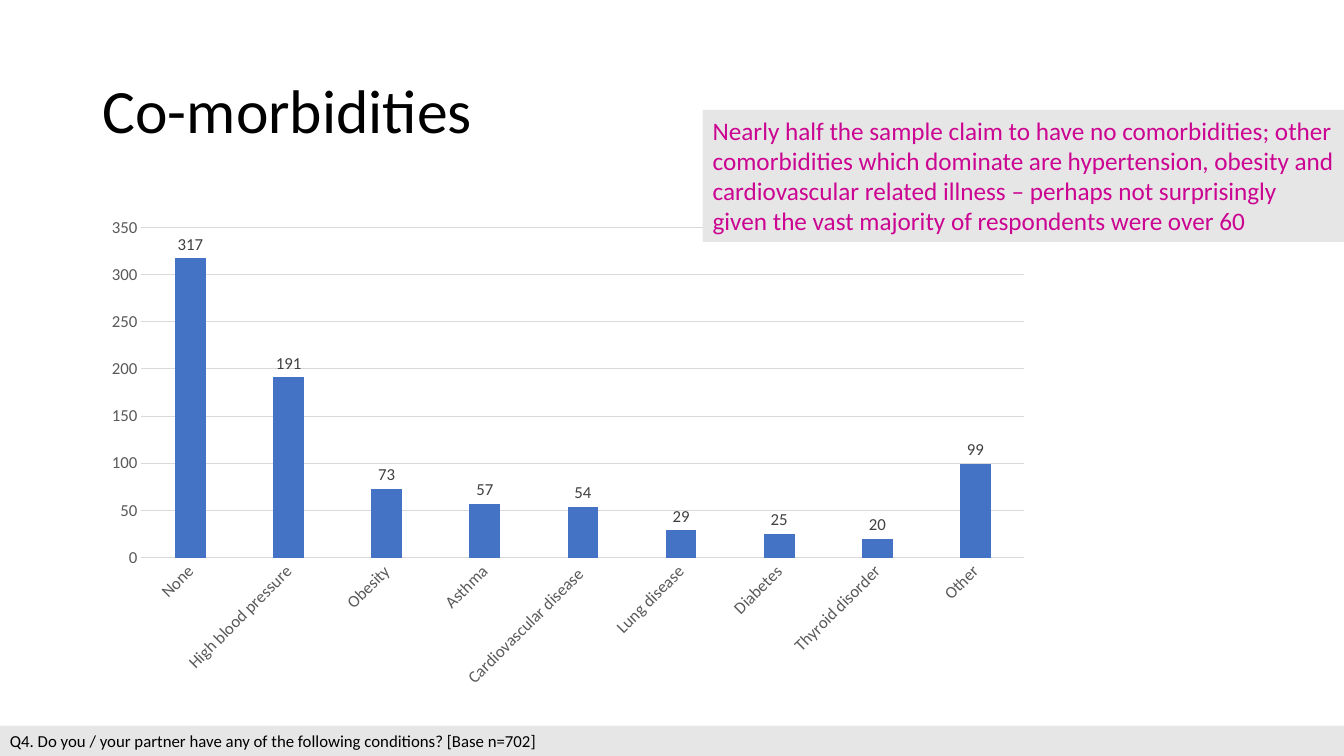
from pptx import Presentation
from pptx.chart.data import CategoryChartData
from pptx.dml.color import RGBColor
from pptx.enum.chart import XL_CHART_TYPE, XL_LABEL_POSITION, XL_TICK_MARK
from pptx.enum.text import MSO_ANCHOR
from pptx.util import Inches, Pt

COLUMNS = XL_CHART_TYPE.COLUMN_CLUSTERED
OUTSIDE_END = XL_LABEL_POSITION.OUTSIDE_END
NO_TICK = XL_TICK_MARK.NONE
TOP, MIDDLE = MSO_ANCHOR.TOP, MSO_ANCHOR.MIDDLE

WIDTH, HEIGHT = 13.33, 7.5
FONT = "Calibri"
BLACK, PANEL, ACCENT, BAR = "000000", "E7E6E6", "CB0592", "4472C4"
AXIS_TEXT, LABEL_TEXT, GRID = "595959", "404040", "D9D9D9"

TITLE = "Co-morbidities"
FINDING = (
    "Nearly half the sample claim to have no comorbidities; other comorbidities "
    "which dominate are hypertension, obesity and cardiovascular related illness "
    "– perhaps not surprisingly given the vast majority of respondents were over 60"
)
QUESTION = "Q4. Do you / your partner have any of the following conditions? [Base n=702]"
CONDITIONS = {
    "None": 317,
    "High blood pressure": 191,
    "Obesity": 73,
    "Asthma": 57,
    "Cardiovascular disease ": 54,
    "Lung disease": 29,
    "Diabetes": 25,
    "Thyroid disorder": 20,
    "Other": 99,
}

MARGIN = 0.92
FINDING_LEFT = 6.97
FOOTER_HEIGHT = 0.3
TITLE_AREA = (MARGIN, 0.4, WIDTH - 2 * MARGIN, 1.45)
CHART_AREA = (MARGIN, 2.06, 9.43, 4.86)
FINDING_AREA = (FINDING_LEFT, 1.09, WIDTH - FINDING_LEFT, 1.31)
FOOTER_AREA = (0, HEIGHT - FOOTER_HEIGHT, WIDTH, FOOTER_HEIGHT)


def rgb(value):
    return RGBColor.from_string(value)


def style_font(font, size, color):
    font.name = FONT
    font.size = Pt(size)
    font.color.rgb = rgb(color)


def add_text(slide, text, area, size, color=BLACK, fill=None, anchor=TOP, spacing=1.0):
    box = slide.shapes.add_textbox(*map(Inches, area))
    if fill:
        box.fill.solid()
        box.fill.fore_color.rgb = rgb(fill)
    frame = box.text_frame
    frame.word_wrap = True
    frame.vertical_anchor = anchor
    paragraph = frame.paragraphs[0]
    paragraph.line_spacing = spacing
    run = paragraph.add_run()
    run.text = text
    style_font(run.font, size, color)


def style_line(line):
    line.color.rgb = rgb(GRID)
    line.width = Pt(0.75)


def add_conditions_chart(slide):
    data = CategoryChartData()
    data.categories = list(CONDITIONS)
    data.add_series("Series 1", list(CONDITIONS.values()))
    chart = slide.shapes.add_chart(COLUMNS, *map(Inches, CHART_AREA), data).chart
    chart.has_legend = False
    chart.has_title = False
    style_font(chart.font, 10, BLACK)

    for axis in (chart.category_axis, chart.value_axis):
        axis.major_tick_mark = axis.minor_tick_mark = NO_TICK
        style_font(axis.tick_labels.font, 12, AXIS_TEXT)
    style_line(chart.category_axis.format.line)
    chart.value_axis.format.line.fill.background()
    chart.value_axis.has_major_gridlines = True
    style_line(chart.value_axis.major_gridlines.format.line)

    plot = chart.plots[0]
    plot.gap_width, plot.overlap = 219, -27
    plot.vary_by_categories = False
    bars = plot.series[0]
    bars.format.fill.solid()
    bars.format.fill.fore_color.rgb = rgb(BAR)
    labels = bars.data_labels
    labels.show_value = True
    labels.position = OUTSIDE_END
    style_font(labels.font, 12, LABEL_TEXT)


def main():
    deck = Presentation()
    deck.slide_width, deck.slide_height = Inches(WIDTH), Inches(HEIGHT)
    slide = deck.slides.add_slide(deck.slide_layouts[6])
    add_text(slide, QUESTION, FOOTER_AREA, 12, fill=PANEL)
    add_text(slide, TITLE, TITLE_AREA, 44, anchor=MIDDLE, spacing=0.9)
    add_conditions_chart(slide)
    add_text(slide, FINDING, FINDING_AREA, 18, color=ACCENT, fill=PANEL)
    deck.save("out.pptx")


if __name__ == "__main__":
    main()
